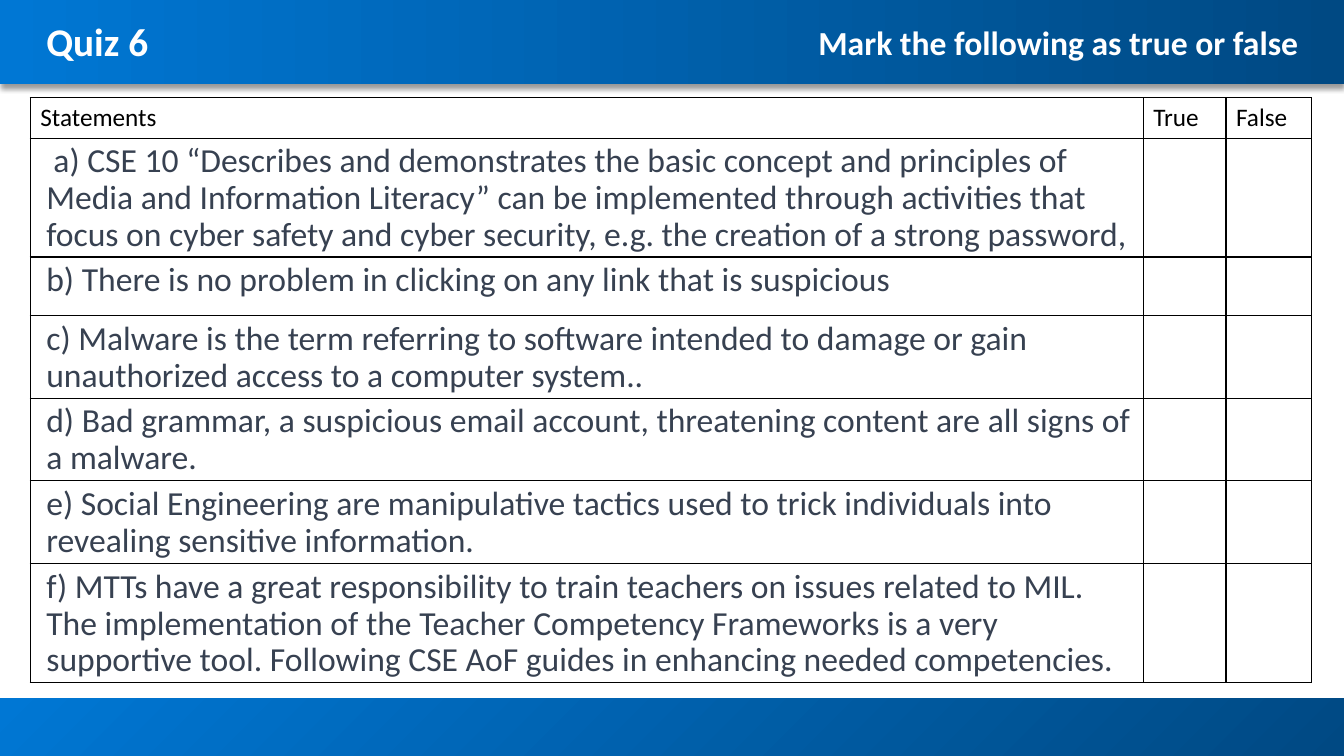
from lxml.etree import SubElement
from pptx import Presentation
from pptx.dml.color import RGBColor
from pptx.enum.shapes import MSO_SHAPE as Shape
from pptx.enum.text import MSO_ANCHOR as Anchor, PP_ALIGN as Align
from pptx.oxml.ns import qn
from pptx.util import Emu, Inches, Pt

WIDTH, HEIGHT = 13.33, 7.5
HEADER_HEIGHT, FOOTER_HEIGHT = 0.83, 0.57
BRIGHT_BLUE, DEEP_BLUE = "0077D4", "004983"
WHITE, BLACK, SLATE = "FFFFFF", "000000", "374151"

TITLE_FONT = {"name": "Calibri", "size": Pt(28), "bold": True}
PROMPT_FONT = {"name": "Calibri", "size": Pt(24), "bold": True}
HEADING_FONT = {"name": "Calibri", "size": Pt(18), "bold": False}
STATEMENT_FONT = {"name": "Calibri", "size": Pt(24), "bold": False}

HEADINGS = ["Statements", "True", "False"]
COLUMN_WIDTHS = [11.04, 0.82, 0.85]
HEADING_HEIGHT = 0.4
# Each statement with the height of its row
STATEMENTS = [
    ("a) CSE 10 “Describes and demonstrates the basic concept and principles of "
     "Media and Information Literacy” can be implemented through activities that "
     "focus on cyber safety and cyber security, e.g. the creation of a strong password,", 1.18),
    ("b) There is no problem in clicking on any link that is suspicious", 0.58),
    ("c) Malware is the term referring to software intended to damage or gain "
     "unauthorized access to a computer system..", 0.82),
    ("d) Bad grammar, a suspicious email account, threatening content are all signs of "
     "a malware.", 0.82),
    ("e) Social Engineering are manipulative tactics used to trick individuals into "
     "revealing sensitive information.", 0.82),
    ("f) MTTs have a great responsibility to train teachers on issues related to MIL. "
     "The implementation of the Teacher Competency Frameworks is a very "
     "supportive tool. Following CSE AoF guides in enhancing needed competencies.", 1.18),
]


def color(hex_string):
    return RGBColor.from_string(hex_string)


def inches(*lengths):
    return [Inches(length) for length in lengths]


def write(text_frame, text, font, hex_color):
    """Fill the first paragraph, format it and return it."""
    paragraph = text_frame.paragraphs[0]
    run = paragraph.add_run()
    run.text = text
    for name, value in font.items():
        setattr(run.font, name, value)
    run.font.color.rgb = color(hex_color)
    return paragraph


def add_bar(slide, box, start, end, angle):
    """Add a gradient bar behind the placeholders."""
    bar = slide.shapes.add_shape(Shape.RECTANGLE, *inches(*box))
    bar.line.fill.background()
    bar.shadow.inherit = False
    bar.fill.gradient()
    bar.fill.gradient_angle = angle
    for stop, hex_color, position in zip(bar.fill.gradient_stops, (start, end), (0, 1)):
        stop.color.rgb = color(hex_color)
        stop.position = position
    slide.shapes._spTree.insert(2, bar._element)
    return bar


def add_drop_shadow(shape):
    effects = shape._element.spPr.find(qn("a:effectLst"))
    shadow = SubElement(effects, qn("a:outerShdw"), blurRad=str(Pt(4)), dist=str(Pt(3)),
                        dir="5400000", algn="t", rotWithShape="0")
    shade = SubElement(shadow, qn("a:srgbClr"), val=BLACK)
    SubElement(shade, qn("a:alpha"), val="40000")


def add_header(slide, box):
    left, top, width, height = box
    add_drop_shadow(add_bar(slide, box, BRIGHT_BLUE, DEEP_BLUE, 0))

    title = slide.shapes.title
    title.left, title.top, title.width, title.height = inches(
        left + 0.46, top + 0.17, width - 0.92, height * 0.6)
    frame = title.text_frame
    for side in ("left", "top", "right", "bottom"):
        setattr(frame, f"margin_{side}", 0)
    frame.vertical_anchor = Anchor.MIDDLE
    paragraph = write(frame, "Quiz 6", TITLE_FONT, WHITE)
    paragraph.alignment = Align.LEFT
    paragraph.line_spacing = 0.99

    prompt = slide.shapes.add_textbox(
        *inches(left + width * 0.6 + 0.02, top + 0.17, 5.15, 0.5))
    prompt.text_frame.word_wrap = True
    write(prompt.text_frame, "Mark the following as true or false", PROMPT_FONT, WHITE)


def format_cell(cell):
    properties = cell._tc.get_or_add_tcPr()
    for edge in ("lnL", "lnR", "lnT", "lnB"):
        line = SubElement(properties, qn(f"a:{edge}"), w=str(Pt(1)))
        fill = SubElement(line, qn("a:solidFill"))
        SubElement(fill, qn("a:srgbClr"), val=BLACK)
    cell.fill.background()


def add_quiz_table(slide, left, top):
    row_heights = [HEADING_HEIGHT] + [height for _, height in STATEMENTS]
    table = slide.shapes.add_table(
        len(row_heights), len(HEADINGS),
        *inches(left, top, sum(COLUMN_WIDTHS), sum(row_heights))).table
    table.first_row = table.horz_banding = False
    for column, width in zip(table.columns, COLUMN_WIDTHS):
        column.width = Inches(width)
    for row, height in zip(table.rows, row_heights):
        row.height = Inches(height)
    for cell in table.iter_cells():
        format_cell(cell)

    for column, heading in enumerate(HEADINGS):
        write(table.cell(0, column).text_frame, heading, HEADING_FONT, BLACK)
    for row, (statement, _) in enumerate(STATEMENTS, start=1):
        paragraph = write(table.cell(row, 0).text_frame, statement, STATEMENT_FONT, SLATE)
        paragraph.line_spacing = 0.9
        first_line = 0.07 if row == 1 else 0
        properties = paragraph._p.get_or_add_pPr()
        properties.set("marL", str(Emu(Inches(0.06))))
        properties.set("indent", str(Emu(Inches(first_line))))


def main():
    presentation = Presentation()
    presentation.slide_width, presentation.slide_height = inches(WIDTH, HEIGHT)
    slide = presentation.slides.add_slide(presentation.slide_layouts[5])
    add_header(slide, (0, 0, WIDTH, HEADER_HEIGHT))
    add_bar(slide, (0, HEIGHT - FOOTER_HEIGHT, WIDTH, FOOTER_HEIGHT),
            DEEP_BLUE, BRIGHT_BLUE, 135)
    add_quiz_table(slide, 0.3, 0.97)
    presentation.save("out.pptx")


if __name__ == "__main__":
    main()
